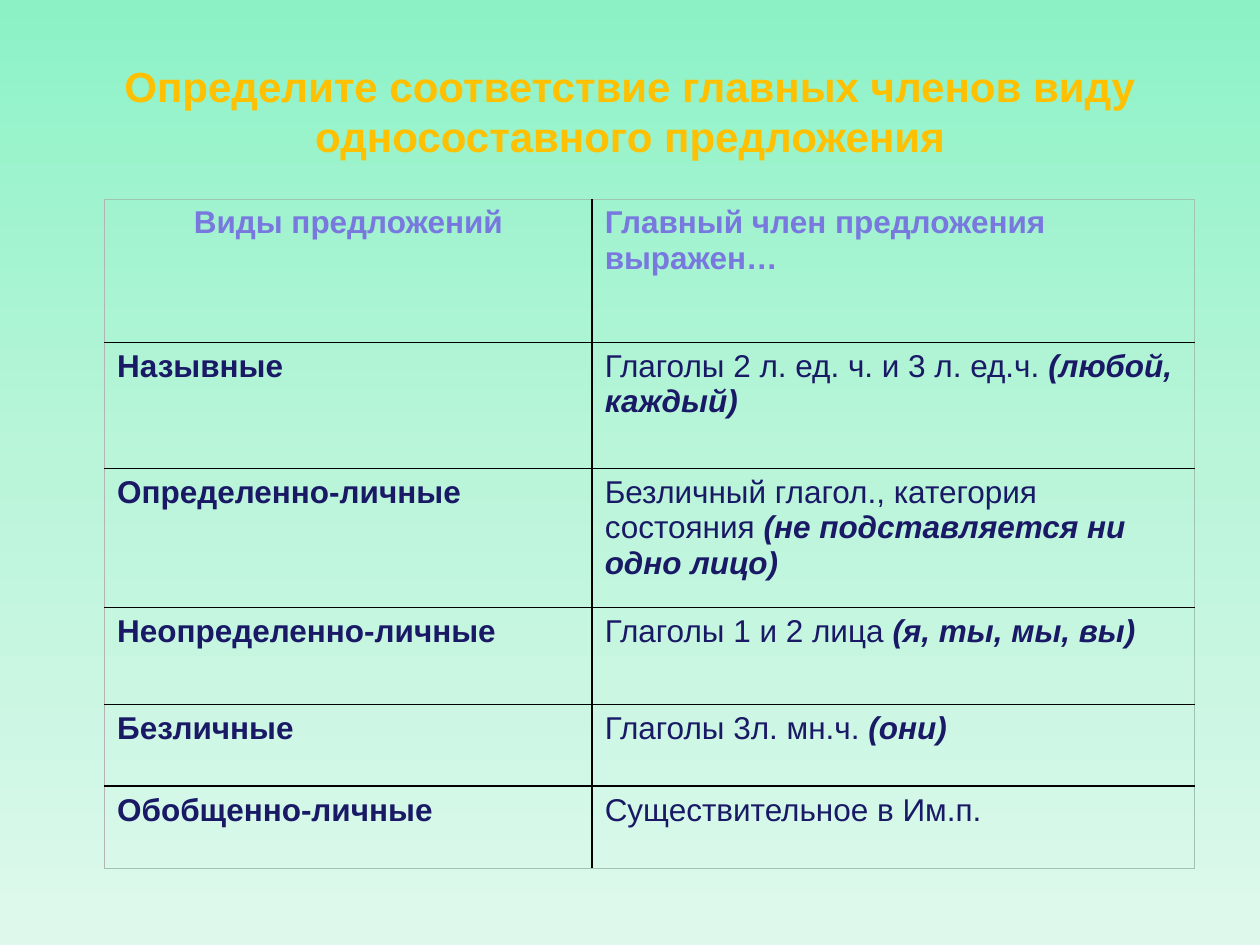
from copy import deepcopy
from lxml import etree
from pptx import Presentation
from pptx.dml.color import RGBColor
from pptx.enum.text import MSO_ANCHOR, PP_ALIGN
from pptx.oxml.ns import qn
from pptx.util import Inches, Pt

CENTER, LEFT = PP_ALIGN.CENTER, PP_ALIGN.LEFT
MIDDLE = MSO_ANCHOR.MIDDLE
COLORS = {
    "top": "8CF2C6", "mid": "BAF5DA", "bottom": "DEF9EC",
    "title": "FFC000", "header": "7878DE", "body": "191966",
    "grid": "000000", "left": "B4B4B4", "edge": "A0C4B4",
}
COLS = [3.87, 4.78]
ROWS = [1.14, 1, 1.1, 0.77, 0.65, 0.65]
CELLS = [
    ("Виды предложений", "", "Главный член предложения выражен…"),
    ("Назывные", "Глаголы 2 л. ед. ч. и 3 л. ед.ч. ", "(любой, каждый)"),
    ("Определенно-личные", "Безличный глагол., категория состояния ",
     "(не подставляется ни одно лицо)"),
    ("Неопределенно-личные", "Глаголы 1 и 2 лица ", "(я, ты, мы, вы)"),
    ("Безличные", "Глаголы 3л. мн.ч. ", "(они)"),
    ("Обобщенно-личные", "Существительное в Им.п.", ""),
]


def add_run(p, text, size, color, bold=True, italic=False):
    r = p.add_run()
    r.text = text
    r.font.name = "Arial"
    r.font.size = Pt(size)
    r.font.bold = bold
    r.font.italic = italic
    r.font.color.rgb = RGBColor.from_string(COLORS[color])


def set_borders(cell, sides):
    tcPr = cell._tc.get_or_add_tcPr()
    for i, (side, color) in enumerate(sides.items()):
        width = 0.25 if color == "edge" else 1
        ln = etree.Element(qn(f"a:ln{side}"), w=str(Pt(width)))
        fill = etree.SubElement(ln, qn("a:solidFill"))
        etree.SubElement(fill, qn("a:srgbClr"), val=COLORS[color])
        tcPr.insert(i, ln)


prs = Presentation()
prs.slide_width, prs.slide_height = Inches(10), Inches(7.5)
s = prs.slides.add_slide(prs.slide_layouts[5])

fill = s.background.fill
fill.gradient()
fill.gradient_angle = 270
stops = s.element.find(".//" + qn("a:gsLst"))
stops.insert(1, deepcopy(stops[0]))
for stop, key, pos in zip(fill.gradient_stops, ("top", "mid", "bottom"), (0, 0.5, 1)):
    stop.color.rgb = RGBColor.from_string(COLORS[key])
    stop.position = pos

title = s.shapes.title
title.left, title.top = Inches(0.75), Inches(0.17)
title.width, title.height = Inches(8.5), Inches(1.42)
tf = title.text_frame
tf.word_wrap = True
tf.vertical_anchor = MIDDLE
p = tf.paragraphs[0]
p.alignment = CENTER
add_run(p, "Определите соответствие главных членов виду односоставного предложения",
        24, "title")

table = s.shapes.add_table(len(ROWS), len(COLS), Inches(0.83), Inches(1.58),
                           Inches(sum(COLS)), Inches(sum(ROWS))).table
table.first_row = table.horz_banding = False
for col, width in zip(table.columns, COLS):
    col.width = Inches(width)
for row, height in zip(table.rows, ROWS):
    row.height = Inches(height)

for i, (kind, plain, strong) in enumerate(CELLS):
    header = i == 0
    color = "header" if header else "body"
    for j in range(len(COLS)):
        cell = table.cell(i, j)
        cell.fill.background()
        set_borders(cell, {
            "L": "grid" if j else "left",
            "R": "edge" if j else "grid",
            "T": "edge" if header else "grid",
            "B": "edge" if i == len(ROWS) - 1 else "grid",
        })
        p = cell.text_frame.paragraphs[0]
        p.alignment = CENTER if header and j == 0 else LEFT
        if j == 0:
            add_run(p, kind, 18, color)
            continue
        if plain:
            add_run(p, plain, 18, color, bold=False)
        if strong:
            add_run(p, strong, 18, color, italic=not header)

prs.save("out.pptx")
